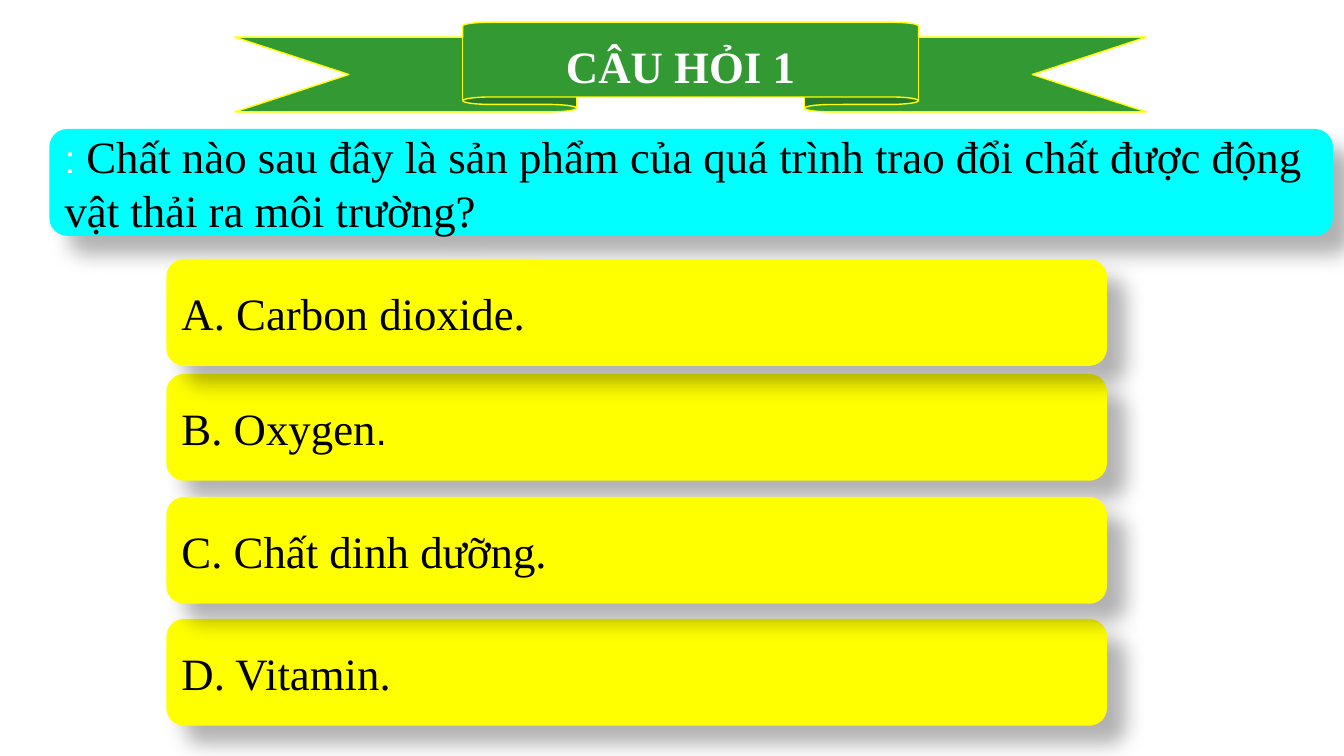
from lxml import etree
from pptx import Presentation
from pptx.dml.color import RGBColor
from pptx.enum import shapes, text
from pptx.oxml.ns import qn
from pptx.util import Inches, Pt

COLORS = {"ribbon": "339933", "answer": "FFFF00", "question": "00FFFF",
          "light": "FFFFFF", "dark": "000000"}
SERIF, SANS = "Times New Roman", "Arial"

TITLE = "CÂU HỎI 1"
QUESTION = [
    (": ", SANS, 28, "light"),
    ("Chất nào sau đây là sản phẩm của quá trình trao đổi chất được động "
     "vật thải ra môi trường?", SERIF, 32, "dark"),
]
ANSWERS = [
    (3.71, [("B. Oxygen", SERIF, 32, "dark"), (".", SANS, 28, "dark")]),
    (2.57, [("A. Carbon dioxide.", SERIF, 32, "dark")]),
    (6.14, [("D. Vitamin.", SERIF, 32, "dark")]),
    (4.93, [("C. Chất dinh dưỡng.", SERIF, 32, "dark")]),
]
CARD_HEIGHT = 1.06


def rgb(name):
    return RGBColor.from_string(COLORS[name])


def add_filled(page, kind, area, color):
    shape = page.shapes.add_shape(kind, *map(Inches, area))
    shape.shadow.inherit = False
    shape.fill.solid()
    shape.fill.fore_color.rgb = rgb(color)
    return shape


def add_spans(para, spans, bold=False):
    for words, font, size, color in spans:
        span = para.add_run()
        span.text = words
        span.font.name = font
        span.font.size = Pt(size)
        span.font.bold = bold
        span.font.color.rgb = rgb(color)


def add_shadow(shape):
    effects = shape._element.spPr.find(qn("a:effectLst"))
    shadow = etree.SubElement(
        effects, qn("a:outerShdw"), blurRad=str(Pt(15)), dist=str(Pt(18)),
        dir=str(45 * 60000), algn="tl", rotWithShape="0")
    color = etree.SubElement(shadow, qn("a:srgbClr"), val=COLORS["dark"])
    etree.SubElement(color, qn("a:alpha"), val="30000")


def add_card(page, left, top, width, color, spans, align):
    card = add_filled(page, shapes.MSO_SHAPE.ROUNDED_RECTANGLE,
                      (left, top, width, CARD_HEIGHT), color)
    card.line.fill.background()
    add_shadow(card)
    frame = card.text_frame
    frame.word_wrap = True
    frame.vertical_anchor = text.MSO_ANCHOR.MIDDLE
    para = frame.paragraphs[0]
    para.alignment = align
    add_spans(para, spans)


def add_heading(page):
    ribbon = add_filled(page, shapes.MSO_SHAPE.UP_RIBBON,
                        (2.33, 0.22, 9.04, 0.89), "ribbon")
    ribbon.line.color.rgb = rgb("answer")
    ribbon.line.width = Pt(1)
    title = page.shapes.title
    title._element.addprevious(ribbon._element)
    title.left, title.top, title.width, title.height = map(
        Inches, (4.52, 0.33, 4.46, 0.64))
    frame = title.text_frame
    frame.word_wrap = True
    frame.auto_size = text.MSO_AUTO_SIZE.SHAPE_TO_FIT_TEXT
    frame.vertical_anchor = text.MSO_ANCHOR.TOP
    para = frame.paragraphs[0]
    para.alignment = text.PP_ALIGN.CENTER
    add_spans(para, [(TITLE, SERIF, 32, "light")], bold=True)


def main():
    deck = Presentation()
    deck.slide_width, deck.slide_height = Inches(13.33), Inches(7.5)
    page = deck.slides.add_slide(deck.slide_layouts[5])
    add_heading(page)
    add_card(page, 0.49, 1.28, 12.73, "question", QUESTION, text.PP_ALIGN.LEFT)
    for top, spans in ANSWERS:
        add_card(page, 1.65, top, 9.33, "answer", spans, text.PP_ALIGN.JUSTIFY)
    deck.save("out.pptx")


if __name__ == "__main__":
    main()
